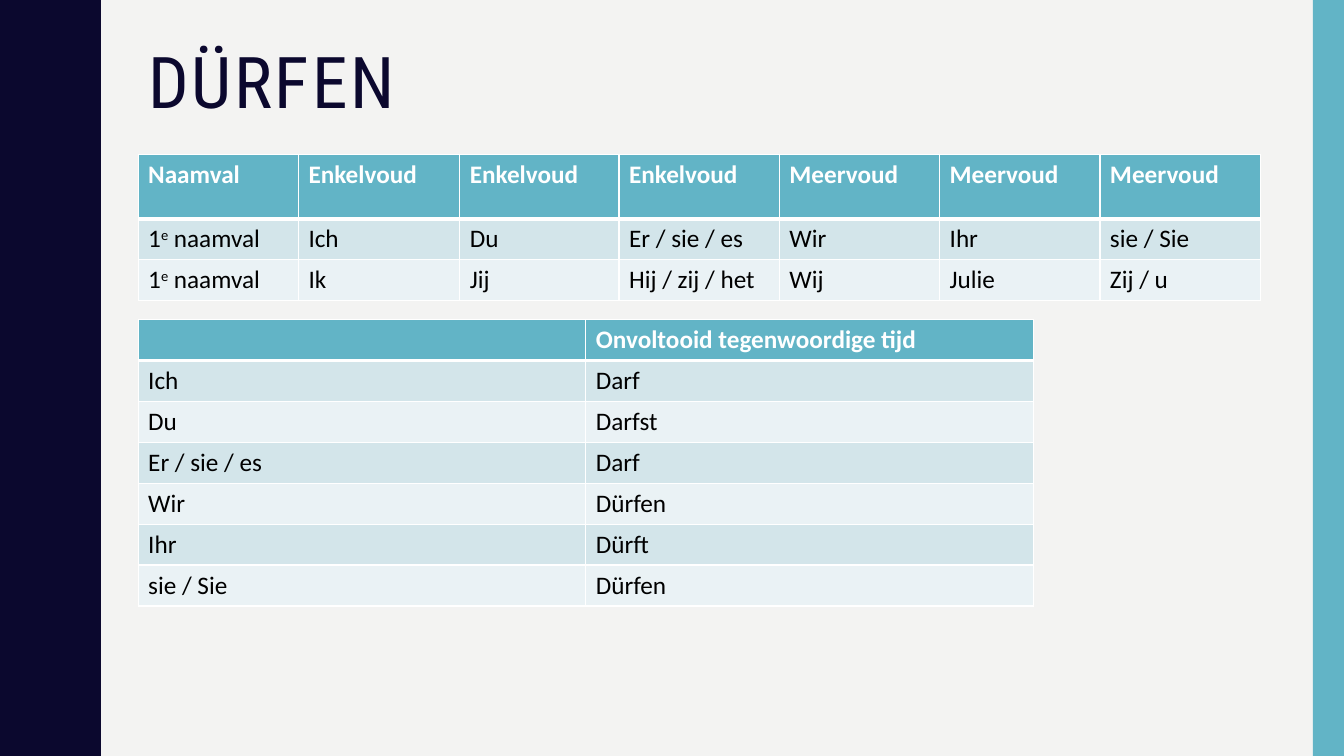
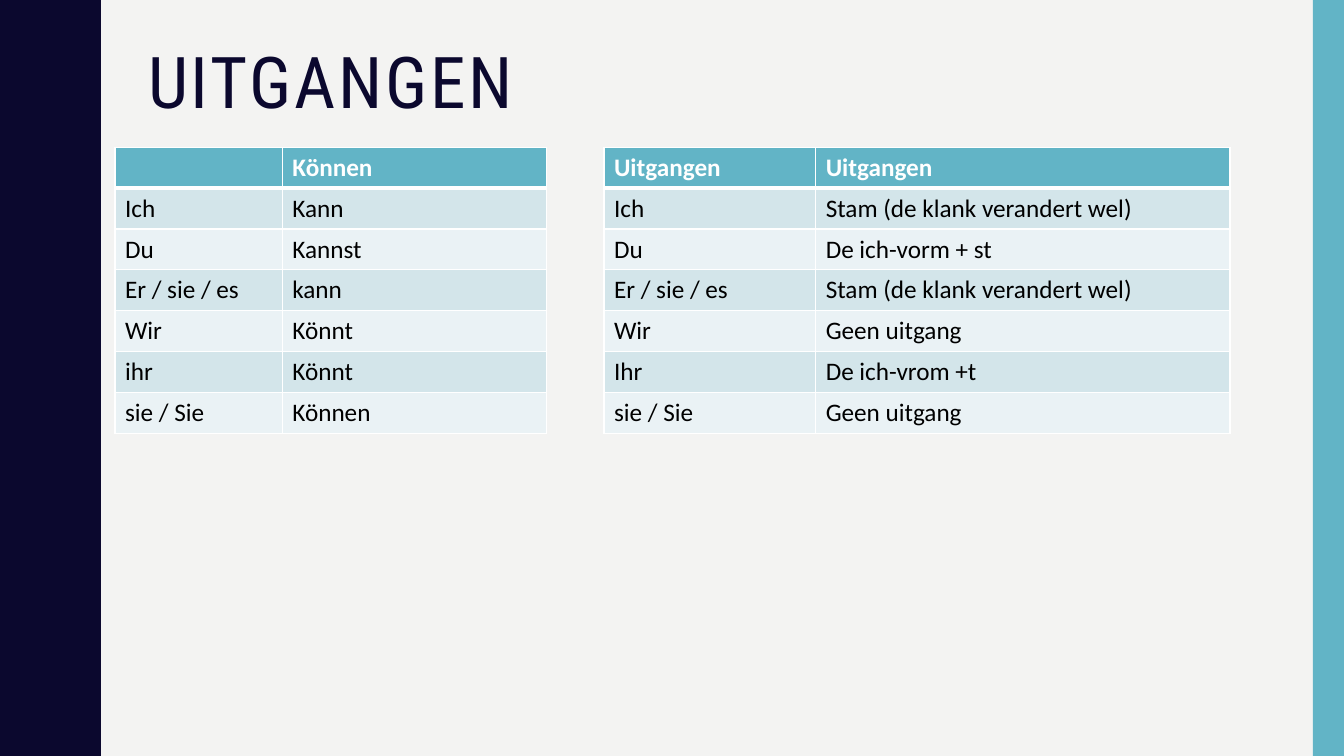
import lxml.etree
import pptx
import pptx.dml.color
import pptx.enum.shapes
import pptx.oxml.ns
import pptx.util

Inches = pptx.util.Inches
Pt = pptx.util.Pt
RGBColor = pptx.dml.color.RGBColor

NAVY = RGBColor(0x0B, 0x08, 0x2E)
TEAL = RGBColor(0x62, 0xB4, 0xC6)
PAPER = RGBColor(0xF3, 0xF3, 0xF2)
WHITE = RGBColor(0xFF, 0xFF, 0xFF)
BLACK = RGBColor(0x00, 0x00, 0x00)
BANDS = (RGBColor(0xD3, 0xE5, 0xEA), RGBColor(0xEA, 0xF2, 0xF5))
TITLE_FONT = "Roboto Condensed"
TABLE_FONT = "Calibri"
ROW = 0.406

# Half a wave of the left band: (x, y) from trough to crest
HALF_WAVE = [(0.78, 0), (0.78, 0.07), (0.79, 0.14), (0.8, 0.2), (0.81, 0.25),
             (0.83, 0.29), (0.85, 0.33), (0.87, 0.38), (0.89, 0.42), (0.91, 0.46),
             (0.93, 0.5), (0.95, 0.55), (0.96, 0.61), (0.97, 0.68), (0.97, 0.75)]
WAVE_LENGTH = 1.5
WAVE = HALF_WAVE + [(x, WAVE_LENGTH - y) for x, y in reversed(HALF_WAVE[:-1])]

FIRST_CASE = ("1", "e", " naamval")  # every second part is superscript

SLIDES = [
    ("DÜRFEN", [
        (1.37, 1.53, [1.59, 1.6, 1.58, 1.59, 1.59, 1.59, 1.59], 0.64, [
            ["Naamval"] + ["Enkelvoud"] * 3 + ["Meervoud"] * 3,
            [FIRST_CASE, "Ich", "Du", "Er / sie / es", "Wir", "Ihr", "sie / Sie"],
            [FIRST_CASE, "Ik", "Jij", "Hij / zij / het", "Wij", "Julie", "Zij / u"],
        ]),
        (1.37, 3.17, [4.44, 4.44], ROW, [
            ["", "Onvoltooid tegenwoordige tijd"],
            ["Ich", "Darf"],
            ["Du", "Darfst"],
            ["Er / sie / es", "Darf"],
            ["Wir", "Dürfen"],
            ["Ihr", "Dürft"],
            ["sie / Sie", "Dürfen"],
        ]),
    ]),
    ("UITGANGEN", [
        (1.14, 1.46, [1.66, 2.62], ROW, [
            ["", "Können"],
            ["Ich", "Kann"],
            ["Du", "Kannst"],
            ["Er / sie / es", "kann"],
            ["Wir", "Könnt"],
            ["ihr", "Könnt"],
            ["sie / Sie", "Können"],
        ]),
        (5.99, 1.46, [2.1, 4.11], ROW, [
            ["Uitgangen", "Uitgangen"],
            ["Ich", "Stam (de klank verandert wel)"],
            ["Du", "De ich-vorm + st"],
            ["Er / sie / es", "Stam (de klank verandert wel)"],
            ["Wir", "Geen uitgang"],
            ["Ihr", "De ich-vrom +t"],
            ["sie / Sie", "Geen uitgang"],
        ]),
    ]),
]


def add_frame(slide, heading):
    """Add the wavy band, the right bar and the title."""
    outline = slide.shapes.build_freeform(0, 0, scale=Inches(1))
    wave_edge = [(x, y + n * WAVE_LENGTH) for n in range(5) for x, y in WAVE]
    outline.add_line_segments(wave_edge + [(0, 7.5)], close=True)
    wavy_band = outline.convert_to_shape()
    right_bar = slide.shapes.add_shape(
        pptx.enum.shapes.MSO_SHAPE.RECTANGLE,
        Inches(13.02), 0, Inches(0.31), Inches(7.5))
    for band, color in ((wavy_band, NAVY), (right_bar, TEAL)):
        band.shadow.inherit = False
        band.fill.solid()
        band.fill.fore_color.rgb = color
        band.line.fill.background()

    title = slide.shapes.add_textbox(Inches(1.37), Inches(0.42), Inches(11.13), Inches(1.63))
    title.text_frame.word_wrap = True
    paragraph = title.text_frame.paragraphs[0]
    paragraph.line_spacing = 0.9
    run = paragraph.add_run()
    run.text = heading
    run.font.name = TITLE_FONT
    run.font.size = Pt(51)
    run.font.color.rgb = NAVY
    run.font._element.set("spc", "200")


def style_cell(cell, row_index):
    """Set the white borders, then the header or band fill."""
    properties = cell._tc.get_or_add_tcPr()
    thick_side = {0: "lnB", 1: "lnT"}.get(row_index)
    for side in ("lnL", "lnR", "lnT", "lnB"):
        border = lxml.etree.SubElement(
            properties, pptx.oxml.ns.qn("a:" + side),
            w=str(Pt(3 if side == thick_side else 1)))
        fill = lxml.etree.SubElement(border, pptx.oxml.ns.qn("a:solidFill"))
        lxml.etree.SubElement(fill, pptx.oxml.ns.qn("a:srgbClr"), val=str(WHITE))
    cell.fill.solid()
    cell.fill.fore_color.rgb = BANDS[(row_index - 1) % 2] if row_index else TEAL


deck = pptx.Presentation()
deck.slide_width = Inches(13.33)
deck.slide_height = Inches(7.5)
deck.slide_master.background.fill.solid()
deck.slide_master.background.fill.fore_color.rgb = PAPER

for heading, tables in SLIDES:
    slide = deck.slides.add_slide(deck.slide_layouts[6])
    add_frame(slide, heading)
    for left, top, widths, header_height, rows in tables:
        height = header_height + ROW * (len(rows) - 1)
        grid = slide.shapes.add_table(
            len(rows), len(widths), Inches(left), Inches(top),
            Inches(sum(widths)), Inches(height)).table
        grid.horz_banding = False
        for column, width in zip(grid.columns, widths):
            column.width = Inches(width)
        for r, entries in enumerate(rows):
            grid.rows[r].height = Inches(ROW if r else header_height)
            for c, entry in enumerate(entries):
                cell = grid.cell(r, c)
                style_cell(cell, r)
                parts = (entry,) if isinstance(entry, str) else entry
                for n, part in enumerate(parts):
                    if not part:
                        continue
                    run = cell.text_frame.paragraphs[0].add_run()
                    run.text = part
                    run.font.name = TABLE_FONT
                    run.font.size = Pt(18)
                    run.font.bold = r == 0
                    run.font.color.rgb = BLACK if r else WHITE
                    if n % 2:
                        run.font._element.set("baseline", "30000")

deck.save("out.pptx")
